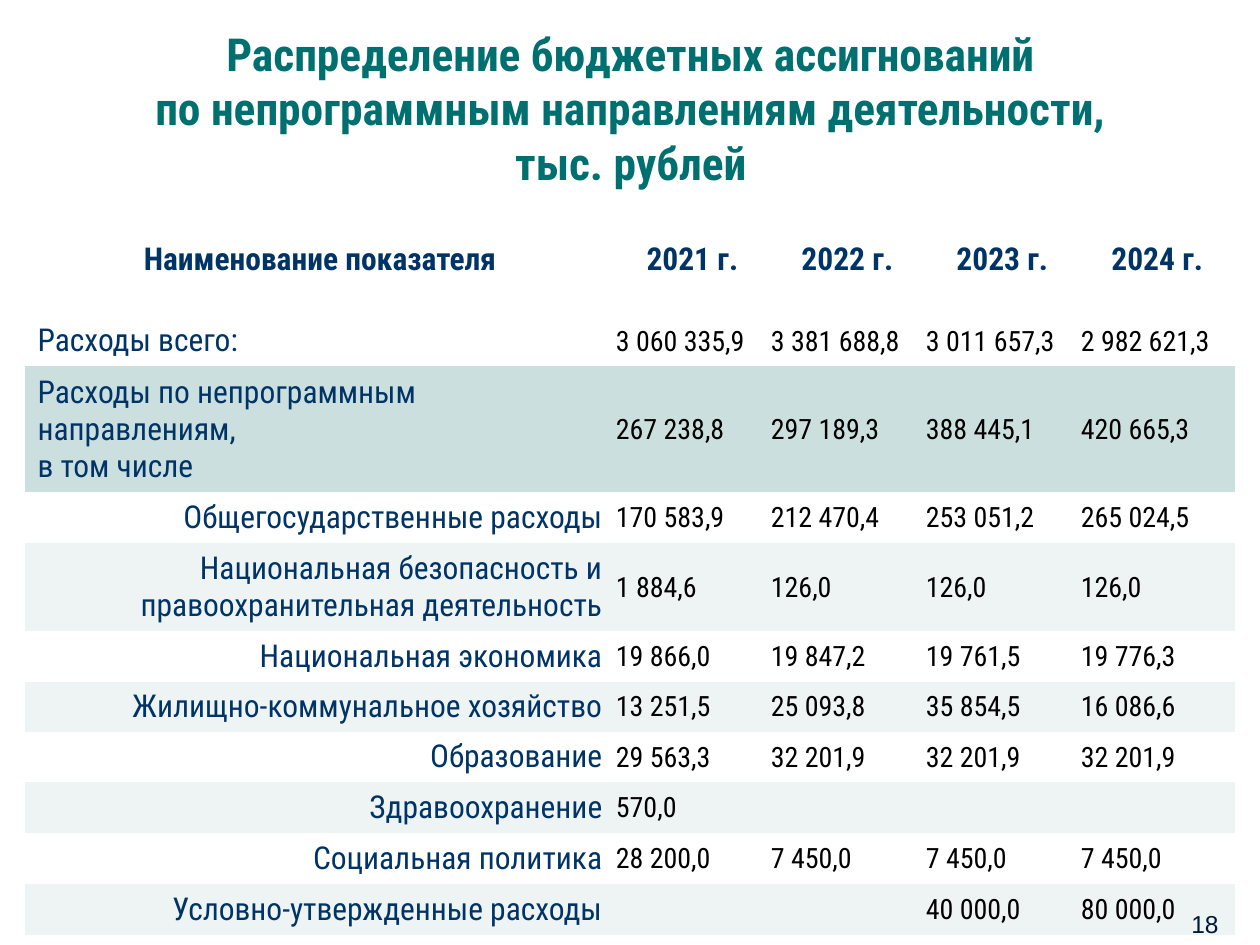
from pptx import Presentation
from pptx.dml.color import RGBColor
from pptx.enum.text import MSO_ANCHOR as Anchor, PP_ALIGN as Align
from pptx.oxml.ns import qn

PX = 914400 / 126
CONDENSED = "Roboto Condensed"
NAVY, BLACK = "003366", "000000"
NO_STYLE_NO_GRID = "{2D5ABB26-0587-4C30-8999-92F81FD0307C}"


def px(count):
    """Turn px into EMU."""
    return round(count * PX)


def write(frame, paragraphs, size, color, align, bold=False, font=CONDENSED):
    """Fill a text frame; a paragraph is a list of lines."""
    for index, lines in enumerate(paragraphs):
        paragraph = frame.add_paragraph() if index else frame.paragraphs[0]
        paragraph.alignment = align
        for number, line in enumerate(lines):
            if number:
                paragraph.add_line_break()
            run = paragraph.add_run()
            run.text = line
            run.font.name = font
            run.font.size = size * 12700
            run.font.bold = bold
            run.font.color.rgb = RGBColor.from_string(color)


presentation = Presentation()
presentation.slide_width, presentation.slide_height = px(1260), px(945)
slide = presentation.slides.add_slide(presentation.slide_layouts[6])

# Title
title = slide.shapes.add_textbox(px(64), px(23), px(1134), px(169)).text_frame
title.word_wrap = True
title.vertical_anchor = Anchor.MIDDLE
title_lines = [
    "Распределение бюджетных ассигнований",
    "по непрограммным направлениям деятельности,",
    "тыс. рублей",
]
write(title, [title_lines], 26, "006F6F", Align.CENTER, bold=True)

# Budget table: height, fill, name alignment, name paragraphs, yearly values
years = ["2021 г.", "2022 г.", "2023 г.", "2024 г."]
PLAIN, BAND, TOTAL = None, "EEF4F4", "CCDFDF"
rows = [
    (112, PLAIN, Align.CENTER, ["Наименование показателя"], years),
    (49, PLAIN, Align.LEFT, ["Расходы всего:"],
     ["3 060 335,9", "3 381 688,8", "3 011 657,3", "2 982 621,3"]),
    (86, TOTAL, Align.LEFT, ["Расходы по непрограммным направлениям,", "в том числе"],
     ["267 238,8", "297 189,3", "388 445,1", "420 665,3"]),
    (49, PLAIN, Align.RIGHT, ["Общегосударственные расходы"],
     ["170 583,9", "212 470,4", "253 051,2", "265 024,5"]),
    (86, BAND, Align.RIGHT, ["Национальная безопасность и правоохранительная деятельность"],
     ["1 884,6", "126,0", "126,0", "126,0"]),
    (49, PLAIN, Align.RIGHT, ["Национальная экономика"],
     ["19 866,0", "19 847,2", "19 761,5", "19 776,3"]),
    (49, BAND, Align.RIGHT, ["Жилищно-коммунальное хозяйство"],
     ["13 251,5", "25 093,8", "35 854,5", "16 086,6"]),
    (49, PLAIN, Align.RIGHT, ["Образование"],
     ["29 563,3", "32 201,9", "32 201,9", "32 201,9"]),
    (49, BAND, Align.RIGHT, ["Здравоохранение"], ["570,0", "", "", ""]),
    (51, PLAIN, Align.RIGHT, ["Социальная политика"],
     ["28 200,0", "7 450,0", "7 450,0", "7 450,0"]),
    (51, BAND, Align.RIGHT, ["Условно-утвержденные расходы"],
     ["", "", "40 000,0", "80 000,0"]),
]
column_widths = [590] + [155] * len(years)
table = slide.shapes.add_table(
    len(rows), len(column_widths), px(25), px(204),
    px(sum(column_widths)), px(sum(row[0] for row in rows)),
).table
table.first_row = table.horz_banding = False
table._tbl.tblPr.find(qn("a:tableStyleId")).text = NO_STYLE_NO_GRID
for column, width in zip(table.columns, column_widths):
    column.width = px(width)

for row_index, (height, fill, name_align, name, values) in enumerate(rows):
    table.rows[row_index].height = px(height)
    header = row_index == 0
    for column_index, paragraphs in enumerate([name] + [[value] for value in values]):
        cell = table.cell(row_index, column_index)
        cell.vertical_anchor = Anchor.MIDDLE
        if fill:
            cell.fill.solid()
            cell.fill.fore_color.rgb = RGBColor.from_string(fill)
        else:
            cell.fill.background()
        is_value = column_index > 0 and not header
        if is_value:
            cell.margin_left = cell.margin_right = cell.margin_top = px(1)
            cell.margin_bottom = 0
        if not any(paragraphs):
            continue
        lines = [[text] for text in paragraphs]
        if is_value:
            write(cell.text_frame, lines, 16, BLACK, Align.LEFT)
        else:
            align = Align.CENTER if header else name_align
            write(cell.text_frame, lines, 18, NAVY, align, bold=header)

# Page number
page_number = slide.shapes.add_textbox(px(937), px(879), px(294), px(66)).text_frame
page_number.word_wrap = True
page_number.vertical_anchor = Anchor.BOTTOM
write(page_number, [["18"]], 14, "001933", Align.RIGHT, font="Arial")

presentation.save("out.pptx")
